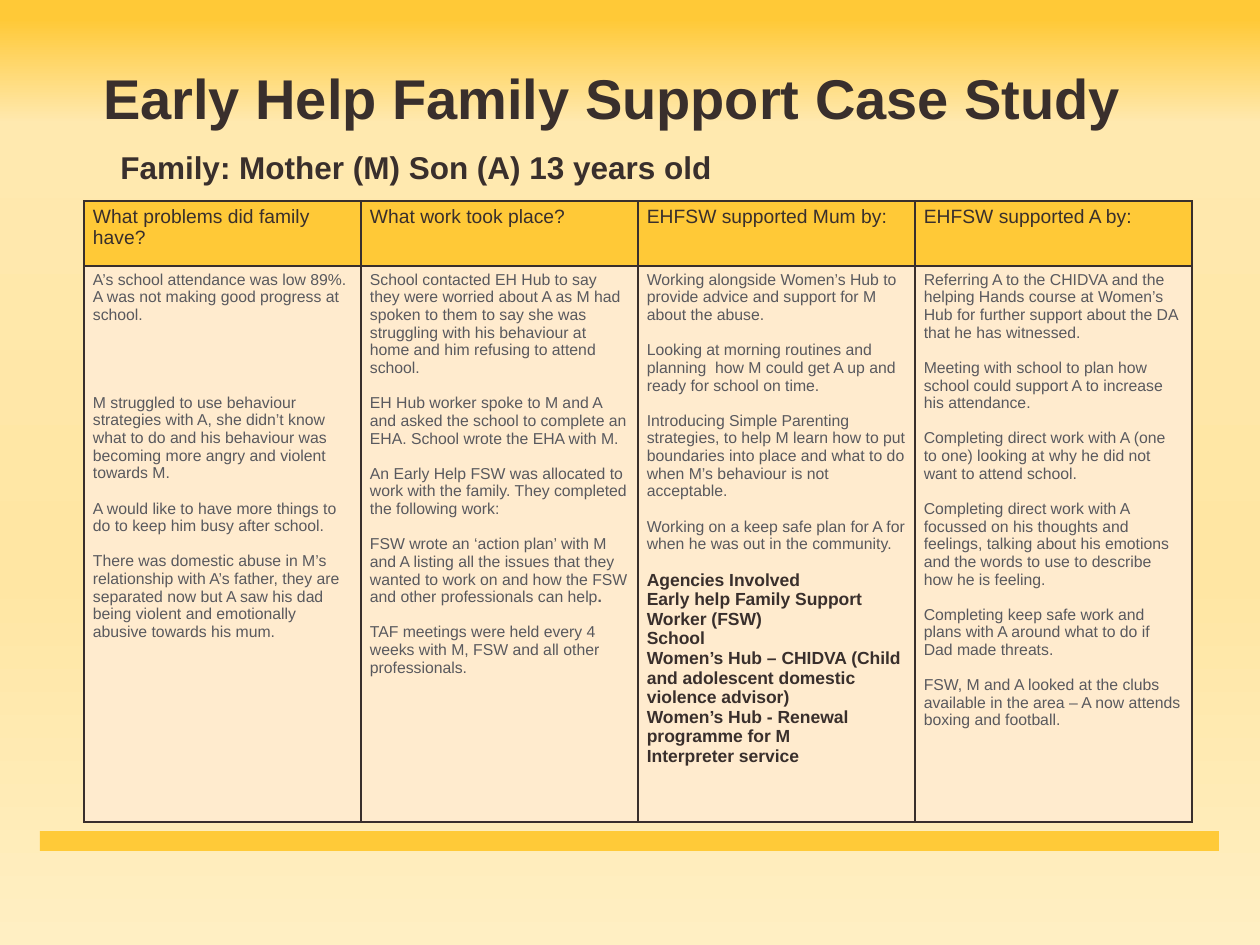
from dataclasses import dataclass

from lxml.etree import SubElement
from pptx import Presentation
from pptx.dml.color import RGBColor
from pptx.enum.shapes import MSO_SHAPE as Shape
from pptx.enum.text import MSO_ANCHOR as Anchor, PP_ALIGN as Align
from pptx.oxml.ns import qn
from pptx.util import Emu, Pt

PX = 914400 / 126


@dataclass(frozen=True)
class Theme:
    """Colours, type sizes and spacing of the deck."""
    font: str = "Arial"
    dark: str = "392F2C"
    grey: str = "59595E"
    gold: str = "FFC937"
    bar: str = "FFCA38"
    cream: str = "FFEBCE"
    backdrop: tuple = ((2, "FFC937"), (13, "FFE9AF"), (61, "FFE6A3"), (100, "FFEFC3"))
    title: int = 32
    subtitle: int = 18
    header: int = 11
    strong: int = 10
    body: int = 9
    gap: int = 10
    border: int = 1


@dataclass(frozen=True)
class Note:
    """One paragraph of a table cell, with its gap counted in lines."""
    text: str
    gap: int = 1
    strong: bool = False
    tail: str = ""


THEME = Theme()

COLUMNS = {
    "What problems did family have?": [
        Note("A’s school attendance was low 89%. A was not making good progress at school."),
        Note("M struggled to use behaviour strategies with A, she didn’t know what to do "
             "and his behaviour was becoming more angry and violent towards M.", gap=4),
        Note("A would like to have more things to do to keep him busy after school."),
        Note("There was domestic abuse in M’s relationship with A’s father, they are separated "
             "now but A saw his dad being violent and emotionally abusive towards his mum."),
    ],
    "What work took place?": [
        Note("School contacted EH Hub to say they were worried about A as M had spoken to them "
             "to say she was struggling with his behaviour at home and him refusing to attend school."),
        Note("EH Hub worker spoke to M and A and asked the school to complete an EHA. "
             "School wrote the EHA with M."),
        Note("An Early Help FSW was allocated to work with the family. "
             "They completed the following work:"),
        Note("FSW wrote an ‘action plan’ with M and A listing all the issues that they wanted "
             "to work on and how the FSW and other professionals can help", tail="."),
        Note("TAF meetings were held every 4 weeks with M, FSW and all other professionals."),
    ],
    "EHFSW supported Mum by:": [
        Note("Working alongside Women’s Hub to provide advice and support for M about the abuse."),
        Note("Looking at morning routines and planning  how M could get A up and ready "
             "for school on time."),
        Note("Introducing Simple Parenting strategies, to help M learn how to put boundaries "
             "into place and what to do when M’s behaviour is not acceptable."),
        Note("Working on a keep safe plan for A for when he was out in the community."),
        Note("Agencies Involved", strong=True),
        Note("Early help Family Support Worker (FSW)", gap=0, strong=True),
        Note("School", gap=0, strong=True),
        Note("Women’s Hub – CHIDVA (Child and adolescent domestic violence advisor)",
             gap=0, strong=True),
        Note("Women’s Hub - Renewal programme for M", gap=0, strong=True),
        Note("Interpreter service", gap=0, strong=True),
    ],
    "EHFSW supported A by:": [
        Note("Referring A to the CHIDVA and the helping Hands course at Women’s Hub for further "
             "support about the DA that he has witnessed."),
        Note("Meeting with school to plan how school could support A to increase his attendance."),
        Note("Completing direct work with A (one to one) looking at why he did not want "
             "to attend school."),
        Note("Completing direct work with A focussed on his thoughts and feelings, talking about "
             "his emotions and the words to use to describe how he is feeling."),
        Note("Completing keep safe work and plans with A around what to do if Dad made threats."),
        Note("FSW, M and A looked at the clubs available in the area – A now attends "
             "boxing and football."),
    ],
}


def px(length):
    """Turn pixels into EMU."""
    return Emu(round(length * PX))


def style(target, size, color, bold=False):
    """Format the font of a run or paragraph."""
    font = target.font
    font.name, font.size, font.bold = THEME.font, Pt(size), bold
    font.color.rgb = RGBColor.from_string(color)


def paint(fill, color):
    """Make a fill solid."""
    fill.solid()
    fill.fore_color.rgb = RGBColor.from_string(color)


def paint_backdrop(page):
    """Fill the page with a vertical gradient."""
    fill = page.background.fill
    fill.gradient()
    fill.gradient_angle = 270
    stops = next(page.background._cSld.iter(qn("a:gsLst")))
    for stop in list(stops):
        stops.remove(stop)
    for position, color in THEME.backdrop:
        stop = SubElement(stops, qn("a:gs"), pos=str(position * 1000))
        SubElement(stop, qn("a:srgbClr"), val=color)


def add_title(page, text, left, top, width, height):
    """Place and format the title."""
    title = page.shapes.title
    title.left, title.top, title.width, title.height = map(px, (left, top, width, height))
    frame = title.text_frame
    frame.text = text
    frame.vertical_anchor = Anchor.MIDDLE
    para = frame.paragraphs[0]
    para.alignment, para.line_spacing = Align.CENTER, 0.9
    style(para.runs[0], THEME.title, THEME.dark, bold=True)


def add_subtitle(page, text, *place):
    """Add the bold line under the title."""
    frame = page.shapes.add_textbox(*map(px, place)).text_frame
    frame.word_wrap = True
    frame.text = text
    style(frame.paragraphs[0].runs[0], THEME.subtitle, THEME.dark, bold=True)


def add_bar(page, *place):
    """Add the plain bar at the foot."""
    bar = page.shapes.add_shape(Shape.RECTANGLE, *map(px, place))
    bar.shadow.inherit = False
    paint(bar.fill, THEME.bar)
    bar.line.fill.background()


def format_cell(cell, color):
    """Give a cell its margins, borders and fill."""
    cell.margin_left = cell.margin_right = px(9)
    cell.margin_top = cell.margin_bottom = px(5)
    properties = cell._tc.get_or_add_tcPr()
    for side in "LRTB":
        line = SubElement(properties, qn(f"a:ln{side}"), w=str(Pt(THEME.border)))
        SubElement(SubElement(line, qn("a:solidFill")), qn("a:srgbClr"), val=THEME.dark)
    paint(cell.fill, color)


def write_notes(frame, notes):
    """Write notes as paragraphs with gaps between them."""
    for index, note in enumerate(notes):
        para = frame.add_paragraph() if index else frame.paragraphs[0]
        para.text = note.text
        para.space_before = Pt(THEME.gap * note.gap if index else 0)
        size, color = (THEME.strong, THEME.dark) if note.strong else (THEME.body, THEME.grey)
        style(para.runs[0], size, color, note.strong)
        if note.tail:
            span = para.add_run()
            span.text = note.tail
            style(span, size, color, bold=True)


def add_case_table(page, columns, left, top, column_width, row_heights):
    """Add the table with one heading and one list of notes per column."""
    width, height = column_width * len(columns), sum(row_heights)
    place = map(px, (left, top, width, height))
    table = page.shapes.add_table(len(row_heights), len(columns), *place).table
    table.first_row = table.horz_banding = False
    for row, row_height in zip(table.rows, row_heights):
        row.height = px(row_height)
    for index, (heading, notes) in enumerate(columns.items()):
        table.columns[index].width = px(column_width)
        head, body = table.cell(0, index), table.cell(1, index)
        format_cell(head, THEME.gold)
        format_cell(body, THEME.cream)
        head.text_frame.text = heading
        style(head.text_frame.paragraphs[0].runs[0], THEME.header, THEME.dark)
        write_notes(body.text_frame, notes)


def main():
    """Build and save the deck."""
    deck = Presentation()
    deck.slide_width, deck.slide_height = px(1260), px(945)
    page = deck.slides.add_slide(deck.slide_layouts[5])
    paint_backdrop(page)
    add_bar(page, 40, 831, 1179, 20)
    add_title(page, "Early Help Family Support Case Study", 23, 44, 1179, 115)
    add_case_table(page, COLUMNS, 84, 201, 277, (65, 556))
    add_subtitle(page, "Family: Mother (M) Son (A) 13 years old", 108, 142, 843, 50)
    deck.save("out.pptx")


if __name__ == "__main__":
    main()
